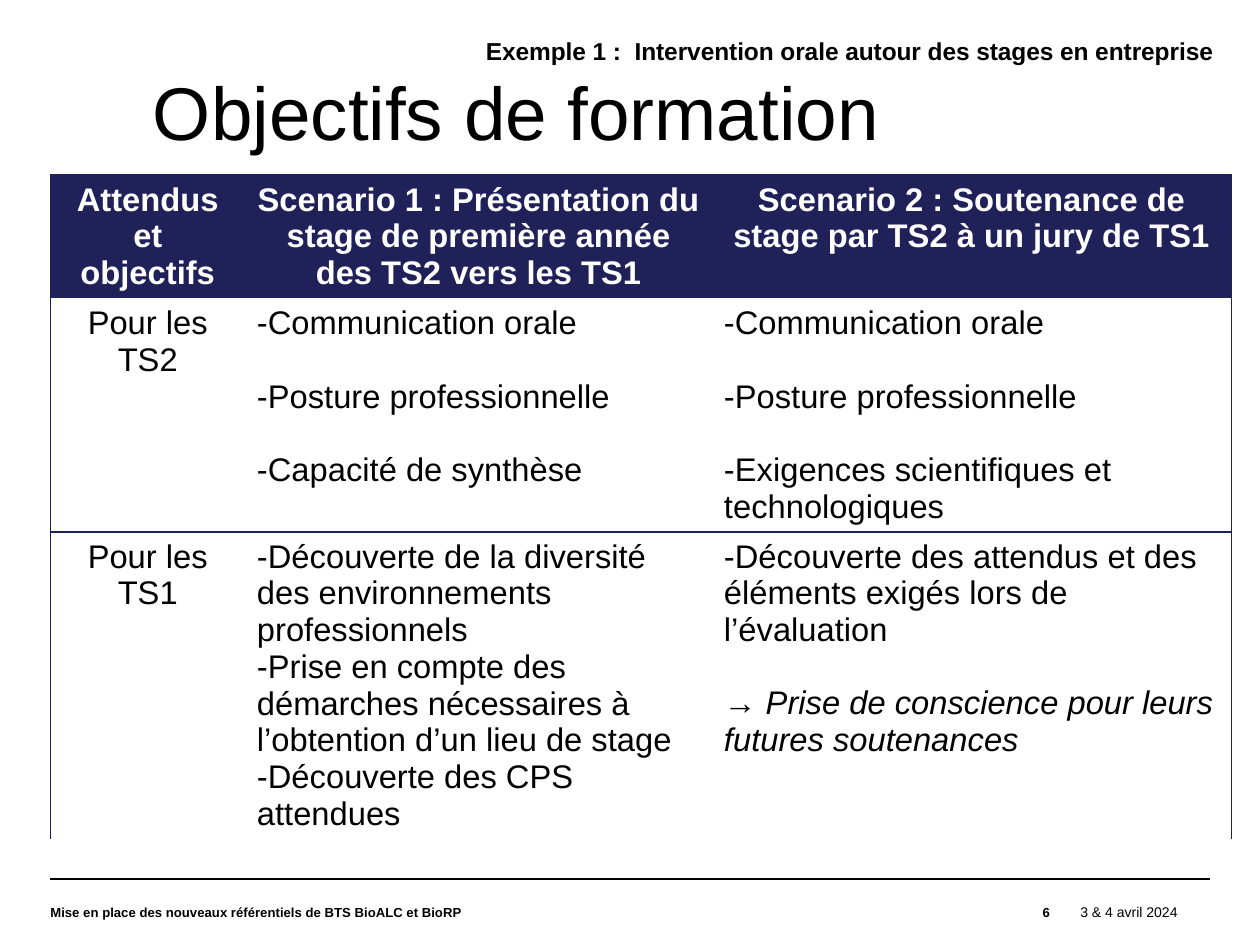
from lxml import etree
from pptx import Presentation
from pptx import util as u
from pptx.dml.color import RGBColor
from pptx.enum import shapes, text
from pptx.oxml import ns

BLACK = RGBColor(0x00, 0x00, 0x00)
WHITE = RGBColor(0xFF, 0xFF, 0xFF)
NAVY = RGBColor(0x21, 0x21, 0x5A)
BORDER = RGBColor(0x1F, 0x1F, 0x59)
FONT = "Arial"
LEFT, CENTER, RIGHT = text.PP_ALIGN.LEFT, text.PP_ALIGN.CENTER, text.PP_ALIGN.RIGHT

# Page in 4:3 format
PAGE_WIDTH = 7.5
PAGE_HEIGHT = PAGE_WIDTH * 3 / 4

# Content
TITLE = "Objectifs de formation"
TITLE_AREA = (0.03, 0.47, 6.09, 0.45)

# Footer strip, from the rule down to the page edge
FOOTER_TOP = 5.23
FOOTER_HEIGHT = PAGE_HEIGHT - FOOTER_TOP
RULE = (0.3, FOOTER_TOP, 7.2, FOOTER_TOP)

# Text, area, alignment, line spacing, font
LABELS = [
    ("Exemple 1 :  Intervention orale autour des stages en entreprise",
     (2.62, 0.09, 4.88, 0.45), CENTER, 0.9, {"size": u.Pt(10.5), "bold": True}),
    ("Mise en place des nouveaux référentiels de BTS BioALC et BioRP",
     (0.3, FOOTER_TOP, 4.84, FOOTER_HEIGHT), LEFT, 1.0, {"size": u.Pt(5.6), "bold": True}),
    ("6", (5.14, FOOTER_TOP, 1.11, FOOTER_HEIGHT), RIGHT, 1.0,
     {"size": u.Pt(5.6), "bold": True}),
    ("3 & 4 avril 2024", (6.24, FOOTER_TOP, 0.96, FOOTER_HEIGHT), CENTER, 1.0,
     {"size": u.Pt(6)}),
]

# Each cell is a list of paragraphs
ROWS = [
    [["Attendus et objectifs"],
     ["Scenario 1 : Présentation du stage de première année des TS2 vers les TS1"],
     ["Scenario 2 : Soutenance de stage par TS2 à un jury de TS1"]],
    [["Pour les TS2"],
     ["-Communication orale", "-Posture professionnelle", "-Capacité de synthèse"],
     ["-Communication orale", "-Posture professionnelle",
      "-Exigences scientifiques et technologiques"]],
    [["Pour les TS1"],
     ["-Découverte de la diversité des environnements professionnels",
      "-Prise en compte des démarches nécessaires à l’obtention d’un lieu de stage",
      "-Découverte des CPS attendues"],
     ["-Découverte des attendus et des éléments exigés lors de l’évaluation",
      "→ Prise de conscience pour leurs futures soutenances"]],
]
TABLE_LEFT, TABLE_TOP = 0.3, 1.04
COLUMN_WIDTHS = [1.16, 2.78, 3.09]
ROW_HEIGHTS = [0.73, 1.38, 1.81]
TIGHT_CELL = (2, 1)
PARAGRAPH_GAP = u.Pt(15.7)


def inches(values):
    return [u.Inches(value) for value in values]


def write(para, words, align, font):
    para.alignment = align
    span = para.add_run()
    span.text = words
    values = {"name": FONT, **font}
    color = values.pop("color", BLACK)
    for name, value in values.items():
        setattr(span.font, name, value)
    span.font.color.rgb = color


def fill_frame(shape, words, align, spacing, font):
    frame = shape.text_frame
    settings = {"word_wrap": True, "auto_size": text.MSO_AUTO_SIZE.NONE,
                "vertical_anchor": text.MSO_ANCHOR.MIDDLE,
                "margin_left": 0, "margin_top": 0, "margin_right": 0, "margin_bottom": 0}
    for name, value in settings.items():
        setattr(frame, name, value)
    para = frame.paragraphs[0]
    para.line_spacing = spacing
    write(para, words, align, font)


def set_borders(cell, drawn):
    properties = cell._tc.get_or_add_tcPr()
    for index, side in enumerate(("lnL", "lnR", "lnT", "lnB")):
        line = etree.Element(ns.qn(f"a:{side}"), w=str(u.Pt(0.75)))
        if side in drawn:
            solid = etree.SubElement(line, ns.qn("a:solidFill"))
            etree.SubElement(solid, ns.qn("a:srgbClr"), val=str(BORDER))
        else:
            etree.SubElement(line, ns.qn("a:noFill"))
        properties.insert(index, line)


def fill_cell(cell, row, column, lines):
    header = row == 0
    for name, value in {"margin_left": 0.07, "margin_right": 0.07,
                        "margin_top": 0.04, "margin_bottom": 0.04}.items():
        setattr(cell, name, u.Inches(value))
    if header:
        cell.fill.solid()
        cell.fill.fore_color.rgb = NAVY
    else:
        cell.fill.background()

    frame = cell.text_frame
    for index, words in enumerate(lines):
        para = frame.add_paragraph() if index else frame.paragraphs[0]
        if index and (row, column) != TIGHT_CELL:
            para.space_before = PARAGRAPH_GAP
        write(para, words, CENTER if header or column == 0 else LEFT,
              {"size": u.Pt(14), "bold": header, "italic": words.startswith("→"),
               "color": WHITE if header else BLACK})

    # Outer frame open at the bottom, one line between the body rows
    rules = {"lnL": column == 0, "lnR": column == len(COLUMN_WIDTHS) - 1,
             "lnT": row in (0, 2), "lnB": row == 1}
    set_borders(cell, [side for side, drawn in rules.items() if drawn])


def add_objectives(page):
    area = inches((TABLE_LEFT, TABLE_TOP, sum(COLUMN_WIDTHS), sum(ROW_HEIGHTS)))
    table = page.shapes.add_table(len(ROWS), len(COLUMN_WIDTHS), *area).table
    table.horz_banding = False
    for column, width in zip(table.columns, COLUMN_WIDTHS):
        column.width = u.Inches(width)
    for row, height in zip(table.rows, ROW_HEIGHTS):
        row.height = u.Inches(height)
    for row, cells in enumerate(ROWS):
        for column, lines in enumerate(cells):
            fill_cell(table.cell(row, column), row, column, lines)


def main():
    deck = Presentation()
    deck.slide_width, deck.slide_height = inches((PAGE_WIDTH, PAGE_HEIGHT))
    page = deck.slides.add_slide(deck.slide_layouts[5])

    # Footer rule
    rule = page.shapes.add_connector(shapes.MSO_CONNECTOR.STRAIGHT, *inches(RULE))
    rule.line.color.rgb = BLACK
    rule.line.width = u.Pt(0.85)
    etree.SubElement(rule._element.spPr, ns.qn("a:effectLst"))

    # Title
    title = page.shapes.title
    title.left, title.top, title.width, title.height = inches(TITLE_AREA)
    fill_frame(title, TITLE, CENTER, 0.9, {"size": u.Pt(32)})

    # Header and footer labels
    for words, area, align, spacing, font in LABELS:
        box = page.shapes.add_textbox(*inches(area))
        fill_frame(box, words, align, spacing, font)

    add_objectives(page)
    deck.save("out.pptx")


if __name__ == "__main__":
    main()
